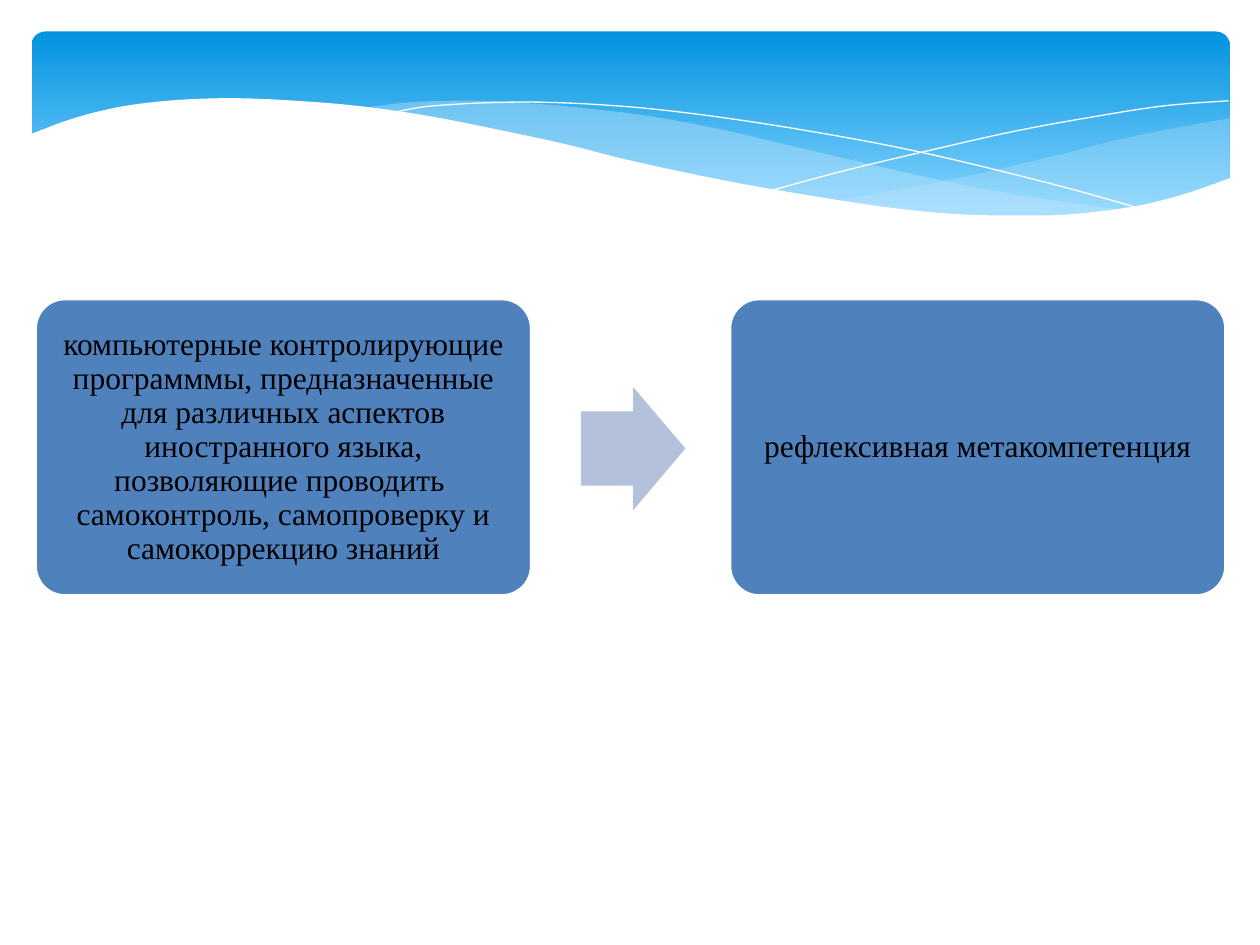
from dataclasses import dataclass

from lxml import etree
from pptx import Presentation
from pptx.dml.color import RGBColor
from pptx.enum.shapes import MSO_SHAPE
from pptx.enum.text import MSO_ANCHOR, PP_ALIGN
from pptx.oxml.ns import qn
from pptx.util import Inches, Pt

ROUNDED = MSO_SHAPE.ROUNDED_RECTANGLE
RIGHT_ARROW = MSO_SHAPE.RIGHT_ARROW
MIDDLE = MSO_ANCHOR.MIDDLE
CENTER = PP_ALIGN.CENTER
BLANK_LAYOUT = 6
CURVE_STEPS = 6

LIGHT_WAVE_TOP = [(9.76, 0.94), (9.35, 1.01), (8.91, 1.1), (8.32, 1.25),
                  (7.53, 1.43), (6.61, 1.6)]
LIGHT_WAVE_BOTTOM = [(6.61, 1.6), (7.19, 1.67), (7.69, 1.71), (8.14, 1.72),
                     (8.63, 1.7), (9.05, 1.63), (9.42, 1.54), (9.76, 1.41)]
MIDDLE_WAVE_TOP = [(8.93, 1.67), (8.37, 1.59), (7.75, 1.49), (7.06, 1.34),
                   (6.29, 1.16), (5.69, 1.02), (5.14, 0.92), (4.65, 0.86),
                   (4.2, 0.82), (3.8, 0.8), (3.28, 0.81), (2.86, 0.86)]
MIDDLE_WAVE_BOTTOM = [(2.86, 0.86), (3.42, 0.94), (4.04, 1.06), (4.91, 1.26),
                      (5.66, 1.43), (6.34, 1.56), (6.95, 1.65), (7.48, 1.7),
                      (8.07, 1.73), (8.57, 1.71), (8.93, 1.67)]
FALLING_LINE = [(3.09, 0.9), (3.44, 0.84), (4.16, 0.81), (4.89, 0.84),
                (5.56, 0.91), (6.36, 1.03), (7.27, 1.2), (8.31, 1.45), (9.07, 1.66)]
RISING_LINE = [(6.13, 1.51), (6.72, 1.35), (7.48, 1.17), (8.06, 1.04),
               (8.66, 0.93), (9.24, 0.84), (9.75, 0.8)]
WHITE_WAVE = [(9.77, 1.41), (9.4, 1.54), (8.99, 1.64), (8.5, 1.7), (8.09, 1.71),
              (7.61, 1.7), (7.08, 1.65), (6.48, 1.56), (5.79, 1.44), (5.03, 1.28),
              (4.47, 1.14), (3.91, 1.02), (3.4, 0.92), (2.92, 0.85), (2.5, 0.81),
              (1.93, 0.78), (1.46, 0.79), (1.06, 0.83), (0.76, 0.89), (0.52, 0.96),
              (0.36, 1.02), (0.23, 1.07)]
WHITE_CORNERS = [(0.23, 2.24), (9.77, 2.24)]

CARDS = [
    "компьютерные контролирующие программмы, предназначенные для различных "
    "аспектов иностранного языка, позволяющие проводить  самоконтроль, "
    "самопроверку и самокоррекцию знаний",
    "рефлексивная метакомпетенция",
]
CARD_LEFT, CARD_TOP, CARD_WIDTH, CARD_HEIGHT = 0.28, 2.37, 3.94, 2.36
CARD_PITCH = 5.51


@dataclass(frozen=True)
class Theme:
    banner_top: str = "0293E0"
    banner_bottom: str = "83D3FE"
    wave: str = "C6E7FC"
    white: str = "FFFFFF"
    card: str = "4F81BD"
    arrow: str = "B3C1DB"
    text: str = "000000"
    font: str = "Times New Roman"
    text_size: int = 18
    outline: int = 2


def smooth_curve(points):
    padded = [points[0], *points, points[-1]]
    curve = [points[0]]
    for before, start, end, after in zip(padded, padded[1:], padded[2:], padded[3:]):
        for step in range(1, CURVE_STEPS + 1):
            t = step / CURVE_STEPS
            curve.append(tuple(
                b + ((c - a) * t + (2 * a - 5 * b + 4 * c - d) * t ** 2
                     + (3 * b - a - 3 * c + d) * t ** 3) / 2
                for a, b, c, d in zip(before, start, end, after)))
    return curve


class SlideBuilder:
    def __init__(self, slide, theme):
        self.slide = slide
        self.theme = theme

    def preset(self, kind, left, top, width, height, adjustments, color=None):
        shape = self.slide.shapes.add_shape(
            kind, Inches(left), Inches(top), Inches(width), Inches(height))
        for index, value in enumerate(adjustments):
            shape.adjustments[index] = value
        shape.shadow.inherit = False
        shape.line.fill.background()
        if color:
            self.paint(shape, color)
        return shape

    def paint(self, shape, color, opacity=100):
        shape.fill.solid()
        shape.fill.fore_color.rgb = RGBColor.from_string(color)
        if opacity < 100:
            color_element = shape.fill._xPr.find(qn("a:solidFill"))[0]
            etree.SubElement(color_element, qn("a:alpha"), val=str(opacity * 1000))

    def outline(self, shape, color, width):
        shape.line.color.rgb = RGBColor.from_string(color)
        shape.line.width = Pt(width)

    def freeform(self, points, close):
        vertices = [(Inches(x), Inches(y)) for x, y in points]
        builder = self.slide.shapes.build_freeform(*vertices[0])
        builder.add_line_segments(vertices[1:], close=close)
        shape = builder.convert_to_shape()
        shape.shadow.inherit = False
        return shape

    def wave(self, points, color, opacity=100):
        shape = self.freeform(points, close=True)
        self.paint(shape, color, opacity)
        shape.line.fill.background()

    def curved_line(self, points):
        shape = self.freeform(smooth_curve(points), close=False)
        shape.fill.background()
        self.outline(shape, self.theme.white, 0)

    def banner(self):
        shape = self.preset(ROUNDED, 0.25, 0.25, 9.51, 1.56, [0.071])
        shape.fill.gradient()
        shape.fill.gradient_angle = 270
        colors = (self.theme.banner_top, self.theme.banner_bottom)
        for stop, color, position in zip(shape.fill.gradient_stops, colors, (0, 0.9)):
            stop.color.rgb = RGBColor.from_string(color)
            stop.position = position

    def card(self, left, text):
        shape = self.preset(ROUNDED, left, CARD_TOP, CARD_WIDTH, CARD_HEIGHT,
                            [0.1], self.theme.card)
        self.outline(shape, self.theme.white, self.theme.outline)
        frame = shape.text_frame
        frame.text = text
        frame.word_wrap = True
        frame.vertical_anchor = MIDDLE
        frame.margin_left = frame.margin_right = Inches(0.07)
        frame.margin_top = frame.margin_bottom = Inches(0.07)
        paragraph = frame.paragraphs[0]
        paragraph.alignment = CENTER
        paragraph.line_spacing = 0.9
        font = paragraph.runs[0].font
        font.name = self.theme.font
        font.size = Pt(self.theme.text_size)
        font.color.rgb = RGBColor.from_string(self.theme.text)

    def arrow(self):
        self.preset(RIGHT_ARROW, 4.61, 3.07, 0.83, 0.98, [0.6, 0.5], self.theme.arrow)


def main():
    presentation = Presentation()
    presentation.slide_width = Inches(10)
    presentation.slide_height = Inches(7.5)
    slide = presentation.slides.add_slide(presentation.slide_layouts[BLANK_LAYOUT])
    theme = Theme()
    builder = SlideBuilder(slide, theme)

    builder.banner()
    builder.wave(smooth_curve(LIGHT_WAVE_TOP) + smooth_curve(LIGHT_WAVE_BOTTOM),
                 theme.wave, 29)
    builder.wave(smooth_curve(MIDDLE_WAVE_TOP) + smooth_curve(MIDDLE_WAVE_BOTTOM),
                 theme.wave, 40)
    builder.curved_line(FALLING_LINE)
    builder.curved_line(RISING_LINE)
    builder.wave(smooth_curve(WHITE_WAVE) + WHITE_CORNERS, theme.white)

    for index, text in enumerate(CARDS):
        builder.card(CARD_LEFT + index * CARD_PITCH, text)
    builder.arrow()

    presentation.save("out.pptx")


if __name__ == "__main__":
    main()
